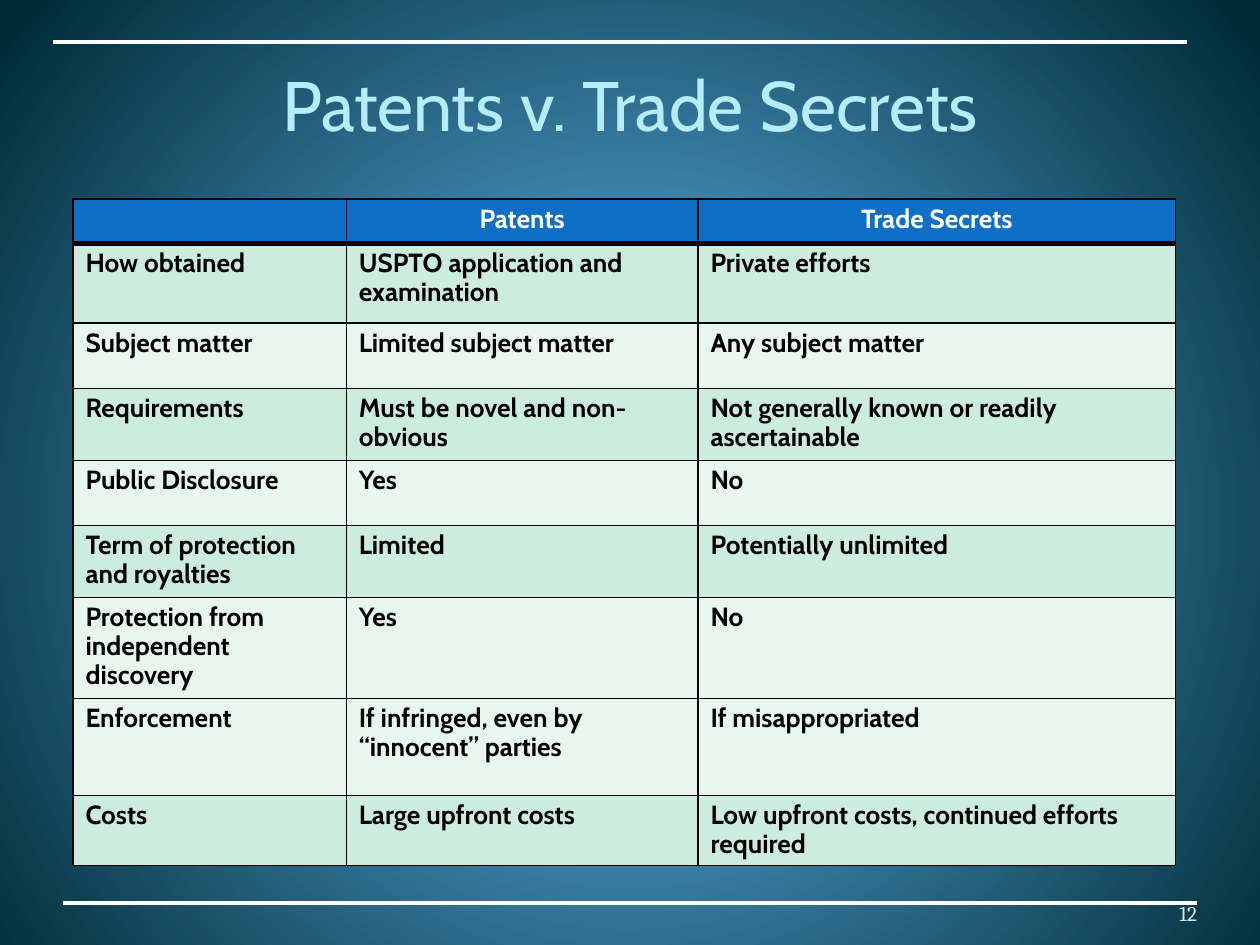
from lxml.etree import SubElement as Sub
from pptx import Presentation
from pptx.dml.color import RGBColor
from pptx.enum.shapes import MSO_CONNECTOR as Link
from pptx.enum.text import MSO_ANCHOR as Anchor, MSO_AUTO_SIZE as Fit, PP_ALIGN as Align
from pptx.oxml import parse_xml
from pptx.oxml.ns import nsdecls, qn
from pptx.util import Cm, Pt

COLS = [5.51, 7.09, 9.63]
ROWS = [
    (0.84, "0F6FC6", ["", "Patents", "Trade Secrets"]),
    (1.6, "CBECDE", ["How obtained", "USPTO application and examination", "Private efforts"]),
    (1.32, "E7F6EF", ["Subject matter", "Limited subject matter", "Any subject matter"]),
    (1.45, "CBECDE", ["Requirements", "Must be novel and non-obvious",
                      "Not generally known or readily ascertainable"]),
    (1.32, "E7F6EF", ["Public Disclosure", "Yes", "No"]),
    (1.45, "CBECDE", ["Term of protection and royalties", "Limited", "Potentially unlimited"]),
    (2.03, "E7F6EF", ["Protection from independent discovery", "Yes", "No"]),
    (1.96, "E7F6EF", ["Enforcement", "If infringed, even by “innocent” parties",
                      "If misappropriated"]),
    (1.37, "CBECDE", ["Costs", "Large upfront costs",
                      "Low upfront costs, continued efforts required"]),
]


def color(code):
    return RGBColor.from_string(code)


def style(para, name, size, code, align, bold=False):
    font = para.font
    font.name, font.size, font.bold = name, Pt(size), bold
    font.color.rgb = color(code)
    para.alignment = align


def paint(slide, stops):
    marks = "".join(
        f'<a:gs pos="{pos * 1000}"><a:srgbClr val="{code}"/></a:gs>' for pos, code in stops)
    back = parse_xml(
        f'<p:bg {nsdecls("p", "a")}><p:bgPr><a:gradFill rotWithShape="1">'
        f'<a:gsLst>{marks}</a:gsLst><a:path path="circle">'
        '<a:fillToRect l="10000" t="110000" r="10000" b="100000"/></a:path>'
        '</a:gradFill><a:effectLst/></p:bgPr></p:bg>')
    slide.element.cSld.insert(0, back)


def head(slide, left, top, width, height):
    title = slide.shapes.title
    title.left, title.top = Cm(left), Cm(top)
    title.width, title.height = Cm(width), Cm(height)
    frame = title.text_frame
    frame.text = "Patents v. Trade Secrets"
    frame.auto_size, frame.vertical_anchor = Fit.NONE, Anchor.BOTTOM
    frame.margin_left = frame.margin_right = frame.margin_bottom = 0
    style(frame.paragraphs[0], "Cabin", 40, "B5EDFD", Align.CENTER)


def edge(cell, side, width):
    line = Sub(cell._tc.get_or_add_tcPr(), qn(f"a:ln{side}"), w=str(Pt(width)))
    Sub(Sub(line, qn("a:solidFill")), qn("a:srgbClr"), val="000000")


def grid(slide, left, top):
    width, height = sum(COLS), sum(row[0] for row in ROWS)
    table = slide.shapes.add_table(
        len(ROWS), len(COLS), Cm(left), Cm(top), Cm(width), Cm(height)).table
    table.first_row = table.horz_banding = False
    for col, size in zip(table.columns, COLS):
        col.width = Cm(size)
    for at, (size, fill, texts) in enumerate(ROWS):
        table.rows[at].height = Cm(size)
        for cell, text in zip(table.rows[at].cells, texts):
            widths = {"L": 1, "R": 1, "T": 3 if at == 1 else 1, "B": 3 if at == 0 else 1}
            for side, line in widths.items():
                edge(cell, side, line)
            cell.fill.solid()
            cell.fill.fore_color.rgb = color(fill)
            cell.text = text
            para = cell.text_frame.paragraphs[0]
            para.line_spacing = 0.9
            ink, align = ("000000", Align.LEFT) if at else ("FFFFFF", Align.CENTER)
            style(para, "Cabin", 15, ink, align, True)


def number(slide, left, top, width, height):
    frame = slide.shapes.add_textbox(Cm(left), Cm(top), Cm(width), Cm(height)).text_frame
    frame.word_wrap, frame.vertical_anchor = True, Anchor.BOTTOM
    frame.margin_left = frame.margin_right = frame.margin_top = frame.margin_bottom = 0
    frame.text = "12"
    style(frame.paragraphs[0], "Cambria", 12, "D1EAEE", Align.RIGHT)


def rule(slide, left, top, width):
    line = slide.shapes.add_connector(
        Link.STRAIGHT, Cm(left), Cm(top), Cm(left + width), Cm(top))
    line.line.color.rgb, line.line.width = color("FFFFFF"), Pt(2.25)
    Sub(line._element.spPr, qn("a:effectLst"))


def main():
    deck = Presentation()
    deck.slide_width, deck.slide_height = Cm(25.4), Cm(19.05)
    slide = deck.slides.add_slide(deck.slide_layouts[5])
    paint(slide, [(0, "4AA0D6"), (25, "4C98C7"), (100, "002C38")])
    head(slide, 1.27, 1.52, 22.86, 1.42)
    grid(slide, 1.47, 4.01)
    number(slide, 22.02, 17.65, 2.11, 1.02)
    rule(slide, 1.07, 0.84, 22.86)
    rule(slide, 1.27, 18.21, 22.86)
    deck.save("out.pptx")


if __name__ == "__main__":
    main()
